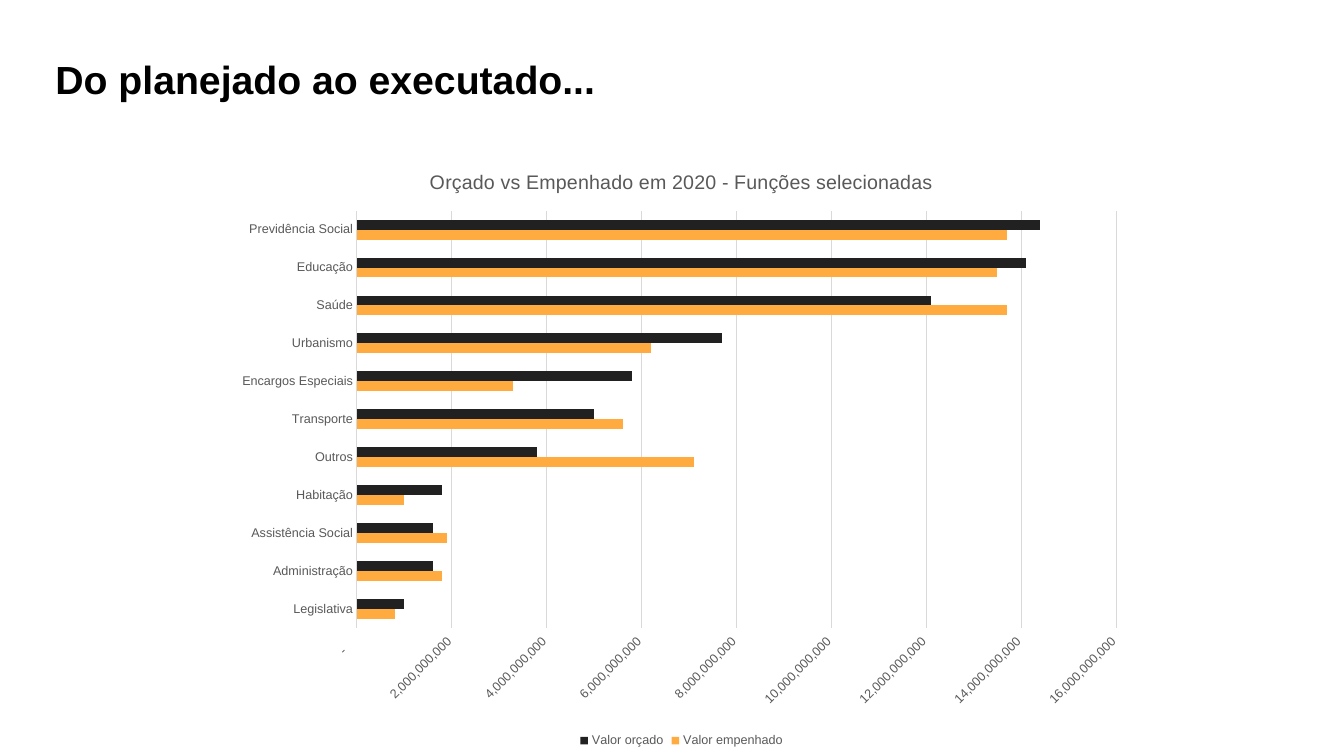
from lxml.etree import SubElement
from pptx import Presentation
from pptx.chart.data import CategoryChartData
from pptx.dml.color import RGBColor
from pptx.enum.chart import XL_CHART_TYPE as ChartType
from pptx.enum.chart import XL_LEGEND_POSITION as LegendPosition
from pptx.enum.chart import XL_TICK_MARK as TickMark
from pptx.enum.text import MSO_ANCHOR as Anchor
from pptx.enum.text import MSO_AUTO_SIZE as AutoSize
from pptx.enum.text import PP_ALIGN as Align
from pptx.oxml.ns import qn
from pptx.util import Inches, Pt

COLORS = {
    "title": "000000",
    "label": "595959",
    "grid": "D9D9D9",
    "committed": "FFAB40",
    "budgeted": "212121",
}
BILLION = 1_000_000_000
NUMBER_FORMAT = '_-* #,##0_-;\\-* #,##0_-;_-* "-"??_-;_-@_'
CHART_WIDTH, CHART_HEIGHT = Inches(9.08), Inches(5.99)

# Function, committed and budgeted amounts in billions, from bottom to top
BUDGET = [
    ("Legislativa", 0.8, 1.0),
    ("Administração", 1.8, 1.6),
    ("Assistência Social", 1.9, 1.6),
    ("Habitação", 1.0, 1.8),
    ("Outros", 7.1, 3.8),
    ("Transporte", 5.6, 5.0),
    ("Encargos Especiais", 3.3, 5.8),
    ("Urbanismo", 6.2, 7.7),
    ("Saúde", 13.7, 12.1),
    ("Educação", 13.5, 14.1),
    ("Previdência Social", 13.7, 14.4),
]


def color(name):
    return RGBColor.from_string(COLORS[name])


def set_values(target, values):
    for name, value in values.items():
        setattr(target, name, value)


def style_font(font, size, color_name, bold=False):
    set_values(font, {"name": "Arial", "size": Pt(size), "bold": bold})
    font.color.rgb = color(color_name)


def style_line(line):
    line.color.rgb = color("grid")
    line.width = Pt(0.75)


def add_title(page, text):
    title = page.shapes.title
    set_values(title, {"left": Inches(0.45), "top": Inches(0.28),
                       "width": Inches(12.42), "height": Inches(0.84)})
    frame = title.text_frame
    margins = ("margin_left", "margin_top", "margin_right", "margin_bottom")
    set_values(frame, dict.fromkeys(margins, Inches(0.1)))
    set_values(frame, {"word_wrap": True, "auto_size": AutoSize.NONE,
                       "vertical_anchor": Anchor.BOTTOM})
    para = frame.paragraphs[0]
    para.alignment = Align.LEFT
    span = para.add_run()
    span.text = text
    style_font(span.font, 28, "title", bold=True)


def budget_data():
    data = CategoryChartData(number_format=NUMBER_FORMAT)
    names, committed, budgeted = zip(*BUDGET)
    data.categories = names
    for name, amounts in (("Valor empenhado", committed), ("Valor orçado", budgeted)):
        data.add_series(name, [round(amount * BILLION) for amount in amounts])
    return data


def style_axes(chart):
    for axis in (chart.category_axis, chart.value_axis):
        set_values(axis, {"major_tick_mark": TickMark.NONE,
                          "minor_tick_mark": TickMark.NONE})
        style_font(axis.tick_labels.font, 9, "label")
    style_line(chart.category_axis.format.line)

    values = chart.value_axis
    set_values(values, {"minimum_scale": 0, "maximum_scale": 16 * BILLION,
                        "major_unit": 2 * BILLION, "has_major_gridlines": True})
    style_line(values.major_gridlines.format.line)
    values.format.line.fill.background()
    set_values(values.tick_labels, {"number_format": NUMBER_FORMAT,
                                    "number_format_is_linked": False})
    # Slant the amounts by 45 degrees
    body = values._element.find(qn("c:txPr")).find(qn("a:bodyPr"))
    body.set("rot", "-2700000")
    body.set("vert", "horz")


def place_plot(chart, left, top, width, height):
    """Fix the inner plot area, measured from the chart's corner."""
    area = chart._chartSpace.chart.plotArea
    layout = area.find(qn("c:layout"))
    if layout is None:
        layout = SubElement(area, qn("c:layout"))
        area.insert(0, layout)
    manual = SubElement(layout, qn("c:manualLayout"))
    settings = {"layoutTarget": "inner", "xMode": "edge", "yMode": "edge",
                "x": left / CHART_WIDTH, "y": top / CHART_HEIGHT,
                "w": width / CHART_WIDTH, "h": height / CHART_HEIGHT}
    for tag, value in settings.items():
        SubElement(manual, qn(f"c:{tag}")).set("val", str(value))


def add_budget_chart(page, heading):
    chart = page.shapes.add_chart(
        ChartType.BAR_CLUSTERED, Inches(2.22), Inches(1.47),
        CHART_WIDTH, CHART_HEIGHT, budget_data()).chart
    style_font(chart.font, 10, "title")

    # Heading
    chart.has_title = True
    span = chart.chart_title.text_frame.paragraphs[0].add_run()
    span.text = heading
    style_font(span.font, 14, "label")
    chart.chart_title.include_in_layout = False

    # Bars
    plot = chart.plots[0]
    set_values(plot, {"gap_width": 182, "overlap": 0, "vary_by_categories": False})
    for series, name in zip(plot.series, ("committed", "budgeted")):
        series.format.fill.solid()
        series.format.fill.fore_color.rgb = color(name)

    # Axes and legend
    style_axes(chart)
    chart.has_legend = True
    set_values(chart.legend, {"position": LegendPosition.BOTTOM,
                              "include_in_layout": False})
    style_font(chart.legend.font, 9, "label")
    place_plot(chart, Inches(1.32), Inches(0.62), Inches(7.53), Inches(4.14))


def main():
    deck = Presentation()
    set_values(deck, {"slide_width": Inches(13.33), "slide_height": Inches(7.5)})
    page = deck.slides.add_slide(deck.slide_layouts[5])
    add_title(page, "Do planejado ao executado...")
    add_budget_chart(page, "Orçado vs Empenhado em 2020 - Funções selecionadas")
    deck.save("out.pptx")


if __name__ == "__main__":
    main()
